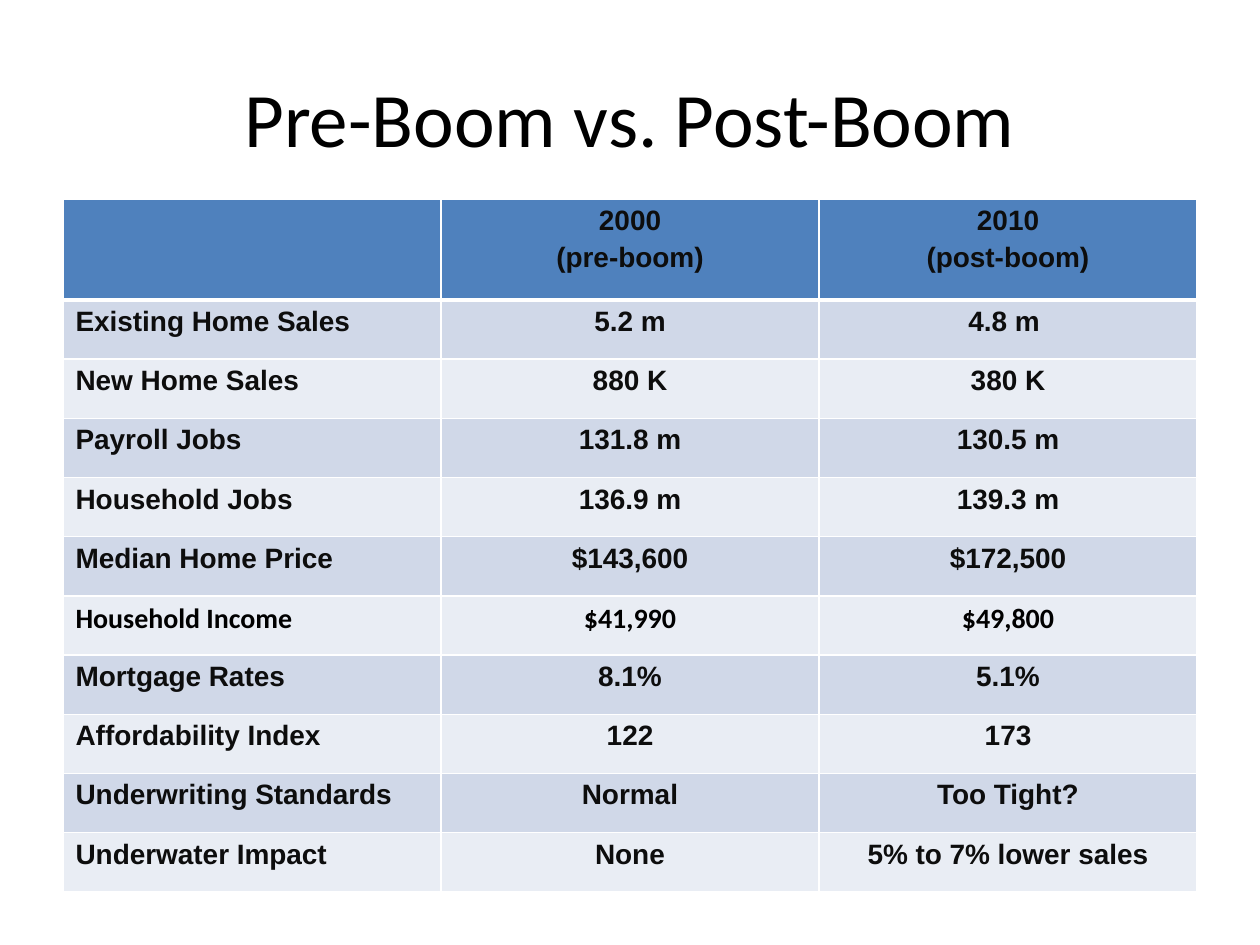
from lxml import etree
from pptx import Presentation, util as u
from pptx.dml.color import RGBColor
from pptx.enum import text
from pptx.oxml.ns import qn

PX = 914400 / 126  # EMU per px


def px(n):
    return u.Emu(round(n * PX))


def add_run(p, words, size, font, colour, bold=False):
    r = p.add_run()
    r.text = words
    for name, value in dict(size=u.Pt(size), name=font, bold=bold).items():
        setattr(r.font, name, value)
    r.font.color.rgb = RGBColor.from_string(colour)


prs = Presentation()
prs.slide_width, prs.slide_height = px(1260), px(945)
s = prs.slides.add_slide(prs.slide_layouts[6])

# Title
tf = s.shapes.add_textbox(px(63), px(38), px(1134), px(157)).text_frame
tf.word_wrap = True
tf.vertical_anchor = text.MSO_ANCHOR.MIDDLE
p = tf.paragraphs[0]
p.alignment = text.PP_ALIGN.CENTER
add_run(p, "Pre-Boom vs. Post-Boom", 44, "Calibri", "000000")

# Comparison table
rows = [
    ("", "2000\n(pre-boom)", "2010\n(post-boom)"),
    ("Existing Home Sales", "5.2 m", "4.8 m "),
    ("New Home Sales", "880 K", "380 K"),
    ("Payroll Jobs", "131.8 m", "130.5 m"),
    ("Household Jobs", "136.9 m", "139.3 m"),
    ("Median Home Price", "$143,600", "$172,500"),
    ("Household Income", "$41,990", "$49,800"),
    ("Mortgage Rates", "8.1%", "5.1%"),
    ("Affordability Index", "122", "173"),
    ("Underwriting Standards", "Normal", "Too Tight?"),
    ("Underwater Impact", "None", "5% to 7% lower sales"),
]
HEADER_H, TABLE_H = 101, 693
BANDS = ("E9EDF4", "D0D8E8")

table = s.shapes.add_table(len(rows), 3, px(63), px(199), px(1134), px(TABLE_H)).table
table.horz_banding = False
for col in table.columns:
    col.width = px(378)

for i, row in enumerate(rows):
    body_h = (TABLE_H - HEADER_H) / (len(rows) - 1)
    table.rows[i].height = px(body_h if i else HEADER_H)
    is_income = row[0] == "Household Income"
    font, colour = ("Calibri", "000000") if is_income else ("Arial", "0D0D0D")

    for j, words in enumerate(row):
        cell = table.cell(i, j)
        tcPr = cell._tc.get_or_add_tcPr()
        for side in "LRTB":
            thick = (i, side) in ((0, "B"), (1, "T"))
            ln = etree.SubElement(tcPr, qn(f"a:ln{side}"), w=str(u.Pt(3 if thick else 1)))
            fill = etree.SubElement(ln, qn("a:solidFill"))
            etree.SubElement(fill, qn("a:srgbClr"), val="FFFFFF")
        cell.fill.solid()
        cell.fill.fore_color.rgb = RGBColor.from_string(BANDS[i % 2] if i else "4F81BD")

        if not words:
            continue
        tf = cell.text_frame
        for k, line in enumerate(words.split("\n")):
            p = tf.add_paragraph() if k else tf.paragraphs[0]
            p.alignment = text.PP_ALIGN.CENTER if j else text.PP_ALIGN.LEFT
            if not is_income:
                before = etree.SubElement(p._p.get_or_add_pPr(), qn("a:spcBef"))
                etree.SubElement(before, qn("a:spcPct"), val="20000")
            add_run(p, line, 16, font, colour, bold=True)

prs.save("out.pptx")
